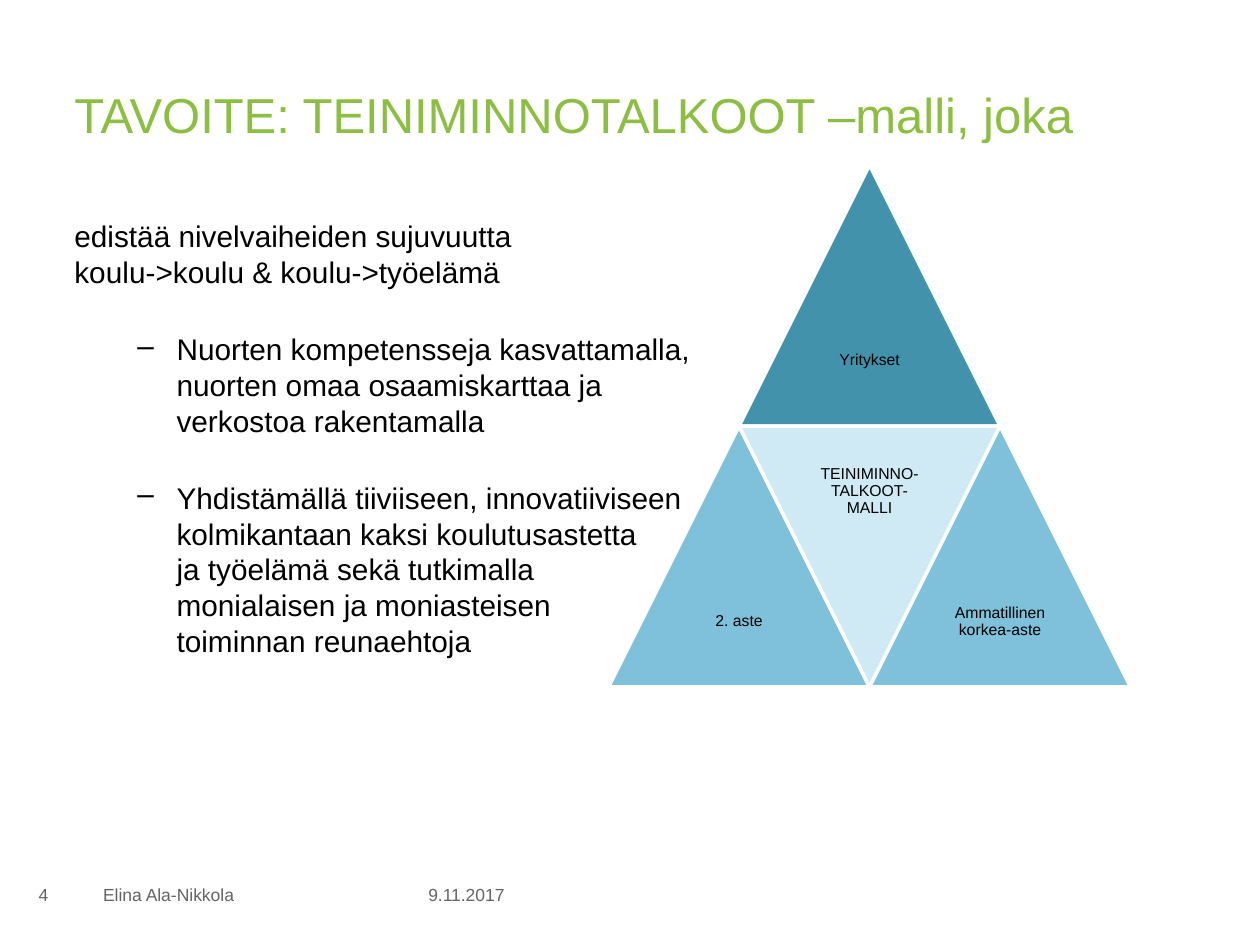
from lxml import etree
from pptx import Presentation
from pptx.dml.color import RGBColor
from pptx.enum.shapes import MSO_SHAPE
from pptx.enum.text import MSO_ANCHOR, PP_ALIGN
from pptx.oxml.ns import qn
from pptx.util import Cm, Pt

SIDE = 5.26
PYRAMID_LEFT, PYRAMID_TOP = 12.27, 3.33
GREEN, BLACK, GREY, WHITE = "8CBE41", "000000", "646464", "FFFFFF"
DARK_BLUE, MID_BLUE, PALE_BLUE = "4392AC", "7FC1DA", "CFE9F5"

# label, fill, column and row in half sides, points down
TRIANGLES = [
    ("Yritykset", DARK_BLUE, 1, 0, False),
    ("2. aste", MID_BLUE, 0, 2, False),
    ("TEINIMINNO-TALKOOT-MALLI", PALE_BLUE, 1, 2, True),
    ("Ammatillinen korkea-aste", MID_BLUE, 2, 2, False),
]
INTRO = "edistää nivelvaiheiden sujuvuutta\vkoulu->koulu & koulu->työelämä"
MEANS = [
    "Nuorten kompetensseja kasvattamalla,\vnuorten omaa osaamiskarttaa ja\v"
    "verkostoa rakentamalla",
    "Yhdistämällä tiiviiseen, innovatiiviseen\vkolmikantaan kaksi koulutusastetta\v"
    "ja työelämä sekä tutkimalla\vmonialaisen ja moniasteisen\vtoiminnan reunaehtoja",
]


def color(value):
    return RGBColor.from_string(value)


def add_box(page, left, top, width, height, margins=(0, 0, 0, 0), anchor=MSO_ANCHOR.TOP):
    """Add a wrapping text box; margins are left, top, right, bottom in cm."""
    box = page.shapes.add_textbox(Cm(left), Cm(top), Cm(width), Cm(height))
    frame = box.text_frame
    frame.word_wrap = True
    frame.vertical_anchor = anchor
    (frame.margin_left, frame.margin_top,
     frame.margin_right, frame.margin_bottom) = map(Cm, margins)
    return frame


def write(para, text, size, ink=BLACK, align=PP_ALIGN.LEFT, spacing=None, before=None):
    para.text = text
    para.alignment = align
    para.line_spacing = spacing
    if before is not None:
        para.space_before = Pt(before)
    para.font.size = Pt(size)
    para.font.name = "Arial"
    para.font.color.rgb = color(ink)


def add_dash(para):
    properties = para._p.get_or_add_pPr()
    properties.set("marL", str(Cm(2.06)))
    properties.set("indent", str(Cm(-0.79)))
    etree.SubElement(properties, qn("a:buChar")).set("char", "–")


def add_body(page):
    frame = add_box(page, 1.5, 4.4, 22.4, 11.5)
    body = {"size": 17, "spacing": Pt(20.4)}
    write(frame.paragraphs[0], INTRO, **body)
    for text in MEANS:
        para = frame.add_paragraph()
        add_dash(para)
        write(para, text, before=23.8, **body)


def add_triangle(page, label, fill, column, row, points_down):
    half = SIDE / 2
    left, top = PYRAMID_LEFT + column * half, PYRAMID_TOP + row * half
    triangle = page.shapes.add_shape(
        MSO_SHAPE.ISOSCELES_TRIANGLE, Cm(left), Cm(top), Cm(SIDE), Cm(SIDE))
    triangle.shadow.inherit = False
    triangle.rotation = 180 if points_down else 0
    triangle.fill.solid()
    triangle.fill.fore_color.rgb = color(fill)
    triangle.line.color.rgb = color(WHITE)
    triangle.line.width = Pt(2)
    label_top = top if points_down else top + half
    frame = add_box(page, left + half / 2, label_top, half, half,
                    (0.1, 0.1, 0.1, 0.1), MSO_ANCHOR.MIDDLE)
    write(frame.paragraphs[0], label, 9, align=PP_ALIGN.CENTER, spacing=0.9)


def add_footer(page, text, left, width, right_margin=0, align=PP_ALIGN.LEFT):
    frame = add_box(page, left, 17.53, width, 0.99,
                    (0.25, 0.13, right_margin, 0.13), MSO_ANCHOR.MIDDLE)
    write(frame.paragraphs[0], text, 10, GREY, align)


def main():
    deck = Presentation()
    deck.slide_width, deck.slide_height = Cm(25.4), Cm(19.05)
    page = deck.slides.add_slide(deck.slide_layouts[6])

    title = add_box(page, 1.5, 1.7, 22.4, 2.49)
    write(title.paragraphs[0], "TAVOITE: TEINIMINNOTALKOOT –malli, joka", 28, GREEN)
    add_body(page)
    add_footer(page, "9.11.2017", 7.42, 3, 0.25, PP_ALIGN.RIGHT)
    add_footer(page, "Elina Ala-Nikkola", 1.83, 5.51)
    add_footer(page, "4", 0.53, 1.19)
    for triangle in TRIANGLES:
        add_triangle(page, *triangle)

    deck.save("out.pptx")


if __name__ == "__main__":
    main()
